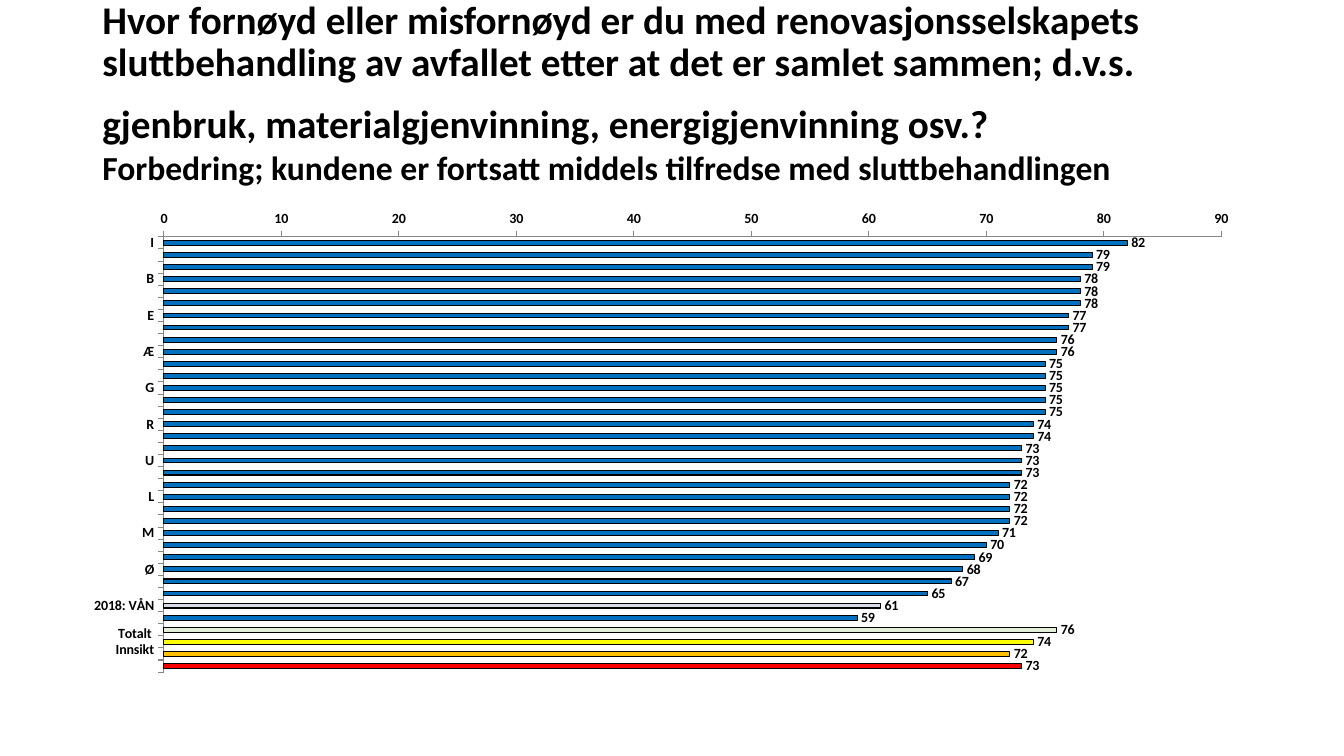
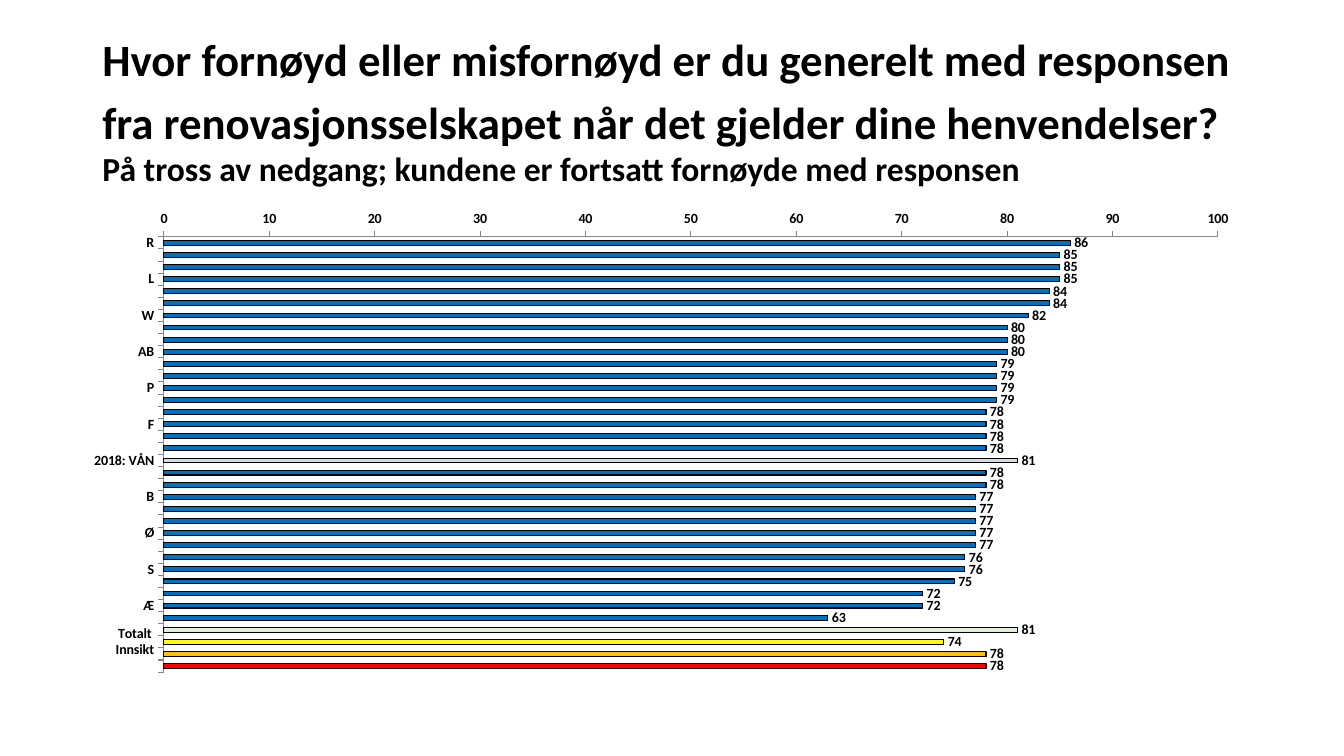
from pptx import Presentation
from pptx.chart.data import CategoryChartData
from pptx.dml.color import RGBColor
from pptx.enum.chart import XL_CHART_TYPE, XL_LABEL_POSITION, XL_TICK_MARK
from pptx.enum.text import MSO_ANCHOR
from pptx.util import Cm, Pt

BAR_CLUSTERED = XL_CHART_TYPE.BAR_CLUSTERED
OUTSIDE_END = XL_LABEL_POSITION.OUTSIDE_END
TICK_OUTSIDE, TICK_NONE = XL_TICK_MARK.OUTSIDE, XL_TICK_MARK.NONE
MIDDLE = MSO_ANCHOR.MIDDLE

BLACK = RGBColor(0x00, 0x00, 0x00)
AXIS_GRAY = RGBColor(0x86, 0x86, 0x86)
BLUE = RGBColor(0x00, 0x70, 0xC0)
LAST_YEAR_GRAY = RGBColor(0xD6, 0xDC, 0xE5)
TOTALS = {
    "Totalt Storby": RGBColor(0xE2, 0xF0, 0xD9),
    "Totalt Innsikt": RGBColor(0xFF, 0xFF, 0x00),
    "Totalt SeSammen": RGBColor(0xFF, 0xC0, 0x00),
    "Totalt RBM20": RGBColor(0xFF, 0x00, 0x00),
}
LAST_YEAR, THIS_YEAR = "2018: VÅN", "2020: VÅN"
POINT_COLORS = {LAST_YEAR: LAST_YEAR_GRAY, **TOTALS}

FONT = {"name": "Calibri", "bold": True}
LEFT, WIDTH = Cm(2.33), Cm(29.21)
TITLE_TOP, TITLE_HEIGHT = Cm(1.01), Cm(3.68)
CHART_TOP, CHART_HEIGHT = Cm(5.08), Cm(12.1)

SLIDES = [
    {
        "question": "Hvor fornøyd eller misfornøyd er du med renovasjonsselskapets "
                    "sluttbehandling av avfallet etter at det er samlet sammen; d.v.s. "
                    "gjenbruk, materialgjenvinning, energigjenvinning osv.?",
        "finding": "Forbedring; kundene er fortsatt middels tilfredse med sluttbehandlingen",
        "size": 28,
        "bottom": Cm(1.07),
        "companies": "I J W B K Z E S A Æ C F G H AB R V T U AA D L Q X M P Y Ø Å".split()
                     + [THIS_YEAR, LAST_YEAR, "N"],
        "scores": [82, 79, 79, 78, 78, 78, 77, 77, 76, 76, 75, 75, 75, 75, 75, 74, 74, 73,
                   73, 73, 72, 72, 72, 72, 71, 70, 69, 68, 67, 65, 61, 59, 76, 74, 72, 73],
    },
    {
        "question": "Hvor fornøyd eller misfornøyd er du generelt med responsen "
                    "fra renovasjonsselskapet når det gjelder dine henvendelser?",
        "finding": "På tross av nedgang; kundene er fortsatt fornøyde med responsen",
        "size": 32,
        "bottom": Cm(0.13),
        "companies": "R A I L E Q W M U AB J K P X D F H".split() + [THIS_YEAR, LAST_YEAR]
                     + "T Å B V Z Ø AA G S C N Æ Y".split(),
        "scores": [86, 85, 85, 85, 84, 84, 82, 80, 80, 80, 79, 79, 79, 79, 78, 78, 78, 78,
                   81, 78, 78, 77, 77, 77, 77, 77, 76, 76, 75, 72, 72, 63, 81, 74, 78, 78],
    },
]


def set_font(font, size):
    for name, value in {**FONT, "size": Pt(size)}.items():
        setattr(font, name, value)
    font.color.rgb = BLACK


def add_run(p, text, size):
    r = p.add_run()
    r.text = text
    set_font(r.font, size)


def add_title(s, question, finding, size, bottom):
    """Write the question and the finding; a large space opens the question's last line."""
    tf = s.shapes.add_textbox(LEFT, TITLE_TOP, WIDTH, TITLE_HEIGHT).text_frame
    tf.word_wrap = True
    tf.vertical_anchor = MIDDLE
    tf.margin_bottom = bottom
    p = tf.paragraphs[0]
    p.line_spacing = 0.9
    add_run(p, question, size)
    add_run(p, " ", 44)
    p = tf.add_paragraph()
    p.line_spacing = 0.9
    add_run(p, finding, 24)


def style_axis(axis):
    axis.has_major_gridlines = False
    axis.major_tick_mark = TICK_OUTSIDE
    axis.minor_tick_mark = TICK_NONE
    axis.format.line.color.rgb = AXIS_GRAY
    axis.format.line.width = Pt(0.75)


def paint_bar(fmt, color):
    fmt.fill.solid()
    fmt.fill.fore_color.rgb = color
    fmt.line.color.rgb = BLACK
    fmt.line.width = Pt(0.75)


def add_score_chart(s, companies, scores):
    categories = companies + list(TOTALS)
    data = CategoryChartData(number_format="0")
    data.categories = categories
    data.add_series("Series 1", scores)
    chart = s.shapes.add_chart(BAR_CLUSTERED, LEFT, CHART_TOP, WIDTH, CHART_HEIGHT, data).chart
    chart.has_legend = False
    chart.has_title = False
    set_font(chart.font, 10)

    for axis in (chart.category_axis, chart.value_axis):
        style_axis(axis)
    chart.category_axis.reverse_order = True
    chart.value_axis.minimum_scale = 0

    plot = chart.plots[0]
    plot.vary_by_categories = False
    plot.gap_width = 150
    plot.has_data_labels = True
    plot.data_labels.show_value = True
    plot.data_labels.position = OUTSIDE_END
    set_font(plot.data_labels.font, 10)

    series = plot.series[0]
    paint_bar(series.format, BLUE)
    for i, category in enumerate(categories):
        if category in POINT_COLORS:
            paint_bar(series.points[i].format, POINT_COLORS[category])


def main():
    prs = Presentation()
    prs.slide_width, prs.slide_height = Cm(33.87), Cm(19.05)
    blank = prs.slide_layouts[6]
    for content in SLIDES:
        s = prs.slides.add_slide(blank)
        add_title(s, *(content[key] for key in ("question", "finding", "size", "bottom")))
        add_score_chart(s, content["companies"], content["scores"])
    prs.save("out.pptx")


if __name__ == "__main__":
    main()
